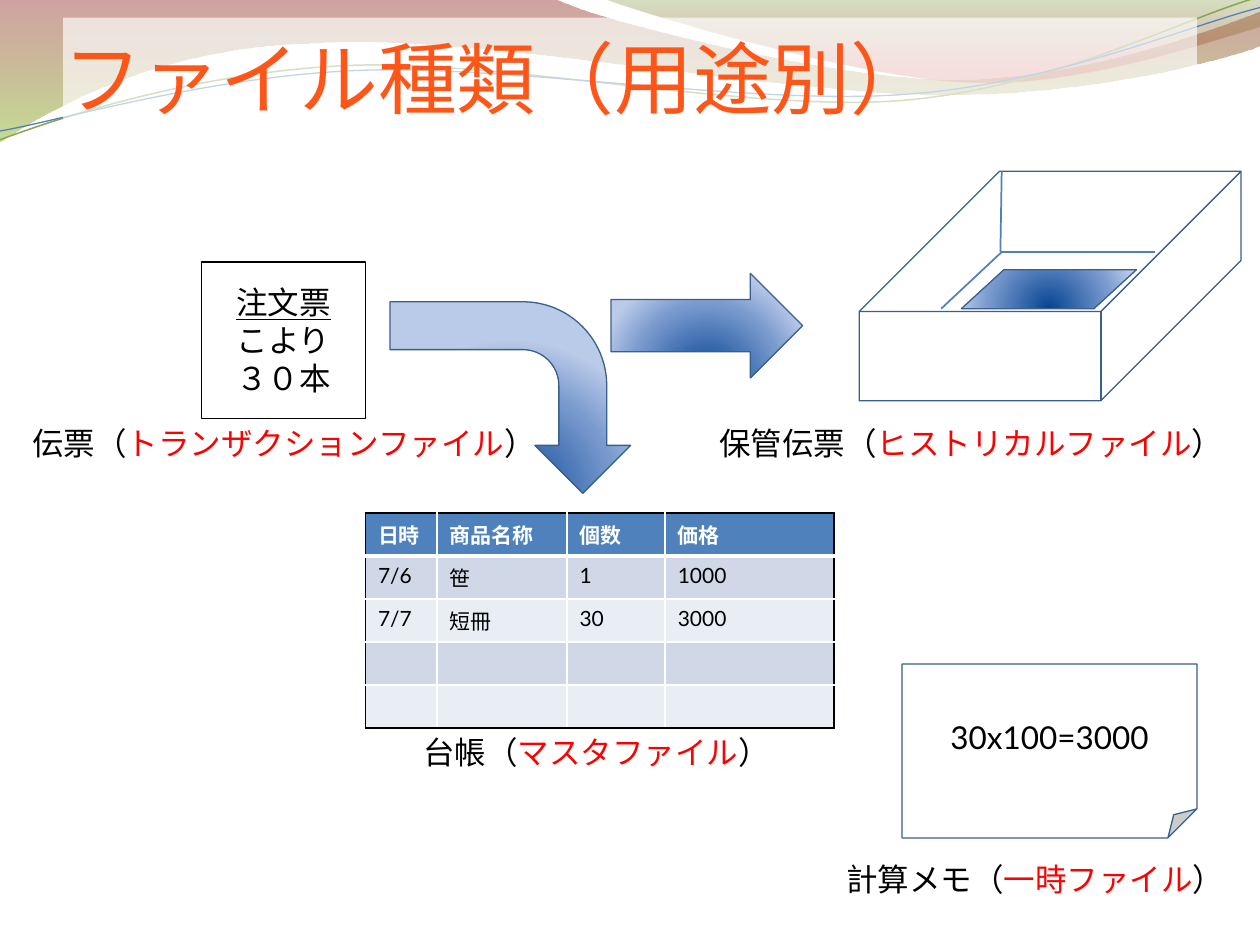
"""Build a slide that sorts business files by use."""
import pptx
import pptx.dml.color
import pptx.enum.shapes
import pptx.enum.text
import pptx.oxml
import pptx.oxml.ns
import pptx.util

COLORS = {
    "black": "000000", "white": "FFFFFF", "red": "FF0000", "orange": "FE5619",
    "outline": "395F8D", "blue": "4F81BD", "olive": "89A54F",
    "odd": "D0D8E8", "even": "E9EDF4",
}
NAMESPACE = pptx.oxml.ns.nsdecls("a")
ROUND = '<a:path path="circle"><a:fillToRect l="50000" t="130000" r="50000" b="-30000"/></a:path>'
DOWN = '<a:lin ang="5400000" scaled="0"/>'
GRADIENTS = {
    "steel": ([(0, "064493", 100), (68, "799ACE", 100), (100, "BACAE9", 100)], ROUND),
    "meadow": ([(0, "973330", 45), (100, "95C238", 55)], DOWN),
    "rose": ([(0, "769537", 30), (80, "BE3330", 45)], DOWN),
}
KIND = pptx.enum.shapes.MSO_SHAPE
ANCHOR = pptx.enum.text.MSO_ANCHOR
ALIGN = pptx.enum.text.PP_ALIGN
FIT = pptx.enum.text.MSO_AUTO_SIZE

deck = pptx.Presentation()
deck.slide_width, deck.slide_height = pptx.util.Inches(10), pptx.util.Inches(7.5)
slide = deck.slides.add_slide(deck.slide_layouts[5])
shapes = slide.shapes
cell = deck.slide_width / 100


def paint(shape, fill=None, line=None, width=0.75):
    """Give a shape its fill and outline, and no shadow."""
    shape.shadow.inherit = False
    if fill in GRADIENTS:
        stops, direction = GRADIENTS[fill]
        marks = "".join(
            f'<a:gs pos="{pos * 1000}"><a:srgbClr val="{color}">'
            f'<a:alpha val="{alpha * 1000}"/></a:srgbClr></a:gs>'
            for pos, color, alpha in stops)
        shape.element.spPr.insert(2, pptx.oxml.parse_xml(
            f'<a:gradFill {NAMESPACE} rotWithShape="1"><a:gsLst>{marks}</a:gsLst>{direction}</a:gradFill>'))
    elif fill:
        shape.fill.solid()
        shape.fill.fore_color.rgb = pptx.dml.color.RGBColor.from_string(COLORS[fill])
    else:
        shape.fill.background()
    if line:
        shape.line.color.rgb = pptx.dml.color.RGBColor.from_string(COLORS[line])
        shape.line.width = pptx.util.Pt(width)
    else:
        shape.line.fill.background()


def write(paragraph, pieces, size=18, face="Lato", align=ALIGN.LEFT, **extras):
    """Add coloured runs of text to a paragraph."""
    paragraph.alignment = align
    for text, color in pieces:
        run = paragraph.add_run()
        run.text = text
        for key, value in {"size": pptx.util.Pt(size), "name": face, **extras}.items():
            setattr(run.font, key, value)
        run.font.color.rgb = pptx.dml.color.RGBColor.from_string(COLORS[color])
        run.font._element.append(pptx.oxml.parse_xml(
            f'<a:ea {NAMESPACE} typeface="Noto Sans CJK JP"/>'))


waves = [
    ("meadow", None, 0, (0, 0), [
        [(44, -0.1)], [(47.6, 1.7), (66.4, 6.3), (75.8, 6.3)],
        [(85.3, 6.3), (95.8, 2.6), (100, 0.9)], [(100.1, 3.6)],
        [(98.3, 4.4), (87, 7.6), (74.6, 7.5)], [(62.2, 7.5), (38.2, 2.8), (25.7, 3.4)],
        [(12.9, 3.6), (4.6, 8.3), (-0.1, 11.3)], [(0, 0)]]),
    ("rose", None, 0, (47.9, -0.1), [
        [(50.9, 1.1), (68.2, 6.2), (76.9, 6.5)], [(85.6, 6.9), (96.1, 3.2), (100, 2.1)],
        [(100, 0)], [(47.9, -0.1)]]),
    (None, "olive", 0.85, (0, 11.1), [
        [(4.8, 9.3), (15.8, 5.7), (27.7, 5.2)], [(39.5, 4.7), (59.3, 8.9), (71.3, 8)],
        [(83.3, 7.1), (93.8, 1.5), (99.8, -0.2)]]),
    (None, "blue", 0.75, (0, 10.4), [
        [(4.7, 9.6), (16.4, 6.1), (28.3, 5.6)], [(40.3, 5.1), (59.7, 8.4), (71.7, 7.5)],
        [(83.6, 6.7), (94.1, 2.1), (100, 0.6)]]),
]
for fill, line, width, start, segments in waves:
    builder = shapes.build_freeform(*(n * cell for n in start))
    builder.add_line_segments(
        [(x * cell, y * cell) for segment in segments for x, y in segment], close=fill is not None)
    wave = builder.convert_to_shape()
    paint(wave, fill, line, width)
    strokes = iter(list(wave.element.iter(pptx.oxml.ns.qn("a:lnTo"))))
    for segment in segments:
        pieces = [next(strokes) for _ in segment]
        if len(pieces) == 3:
            curve = pptx.oxml.parse_xml(f"<a:cubicBezTo {NAMESPACE}/>")
            pieces[0].addprevious(curve)
            for piece in pieces:
                curve.append(piece[0])
                piece.getparent().remove(piece)
    slide.slide_layout.shapes.element.append(wave.element)

heading = shapes.title
for key, value in {"left": 5, "top": 1.4, "width": 90, "height": 8.5}.items():
    setattr(heading, key, round(value * cell))
for key, value in {"margin_left": 0, "margin_right": 0, "margin_bottom": 0, "word_wrap": True,
                   "vertical_anchor": ANCHOR.BOTTOM, "auto_size": FIT.NONE}.items():
    setattr(heading.text_frame, key, value)
heading.fill.solid()
heading.fill.fore_color.rgb = pptx.dml.color.RGBColor.from_string(COLORS["white"])
veil = heading.element.spPr.find(".//" + pptx.oxml.ns.qn("a:srgbClr"))
veil.append(pptx.oxml.parse_xml(f'<a:alpha {NAMESPACE} val="66000"/>'))
write(heading.text_frame.paragraphs[0], [("ファイル種類（用途別）", "orange")], 45, "Noto Sans CJK JP")

entries = [("日時", "商品名称", "個数", "価格"), ("7/6", "笹", "1", "1000"),
           ("7/7", "短冊", "30", "3000"), ("",) * 4, ("",) * 4]
columns = [5.7, 10.3, 7.8, 13.4]
ledger = shapes.add_table(len(entries), len(columns), *(
    round(n * cell) for n in (29, 40.7, sum(columns), 17))).table
for column, width in zip(ledger.columns, columns):
    column.width = round(width * cell)
for r, entry in enumerate(entries):
    ledger.rows[r].height = round(3.4 * cell)
    for c, text in enumerate(entry):
        box = ledger.cell(r, c)
        box.fill.solid()
        shade = "blue" if r == 0 else "odd" if r % 2 else "even"
        box.fill.fore_color.rgb = pptx.dml.color.RGBColor.from_string(COLORS[shade])
        paragraph = box.text_frame.paragraphs[0]
        if text:
            write(paragraph, [(text, "black" if r else "white")], 12, bold=r == 0)
        else:
            paragraph._p.get_or_add_endParaRPr().set("sz", "1200")
        edges = {"L": c == 0, "R": c == len(columns) - 1, "T": r == 0, "B": r == len(entries) - 1}
        for place, (side, outer) in enumerate(edges.items()):
            points = 3 if (r, side) in ((0, "B"), (1, "T")) else 1
            box._tc.get_or_add_tcPr().insert(place, pptx.oxml.parse_xml(
                f'<a:ln{side} {NAMESPACE} w="{points * 12700}"><a:solidFill><a:srgbClr '
                f'val="{COLORS["black" if outer else "white"]}"/></a:solidFill></a:ln{side}>'))

figures = [
    (KIND.RECTANGLE, (16, 20.8, 13, 12.4), None, "black", None, 0, ["注文票", "こより", "３０本"]),
    (KIND.CUBE, (68.2, 13.6, 30.3, 18.2), None, "outline", 0.611, 0, []),
    (KIND.PARALLELOGRAM, (76.3, 21.4, 13.9, 3.1), "steel", "outline", 1.091, 0, []),
    (KIND.BENT_ARROW, (32.9, 22, 15.2, 19.1), "steel", "outline", None, 90, []),
    (KIND.RIGHT_ARROW, (48.5, 21.7, 15.2, 8.3), "steel", "outline", None, 0, []),
    (KIND.FOLDED_CORNER, (71.6, 52.7, 23.4, 13.8), "white", "outline", None, 0, ["30x100=3000"]),
]
for kind, place, fill, line, adjustment, rotation, texts in figures:
    figure = shapes.add_shape(kind, *(round(n * cell) for n in place))
    figure.rotation = rotation
    if adjustment:
        figure.adjustments[0] = adjustment
    paint(figure, fill, line)
    figure.text_frame.vertical_anchor = ANCHOR.MIDDLE
    for index, text in enumerate(texts):
        paragraph = figure.text_frame.add_paragraph() if index else figure.text_frame.paragraphs[0]
        write(paragraph, [(text, "black")], align=ALIGN.CENTER, underline=text == "注文票")

for ends in [(79.5, 13.6, 79.4, 20), (79.4, 20, 91.7, 20), (79.5, 20, 74.7, 24.5)]:
    crease = shapes.add_connector(pptx.enum.shapes.MSO_CONNECTOR.STRAIGHT, *(round(n * cell) for n in ends))
    crease.line.color.rgb = pptx.dml.color.RGBColor.from_string(COLORS["blue"])
    crease.line.width = pptx.util.Pt(1)
    crease.element.spPr.append(pptx.oxml.parse_xml(f"<a:effectLst {NAMESPACE}/>"))

captions = [
    ("台帳", "マスタファイル", 32.6, 57.7, 29.8),
    ("伝票", "トランザクションファイル", 1.6, 33.2, 42.4),
    ("保管伝票", "ヒストリカルファイル", 56.1, 33.2, 42.4),
    ("計算メモ", "一時ファイル", 66.2, 67.8, 32.3),
]
for paper, role, left, top, width in captions:
    frame = shapes.add_textbox(*(round(n * cell) for n in (left, top, width, 4))).text_frame
    frame.word_wrap = False
    frame.auto_size = FIT.SHAPE_TO_FIT_TEXT
    write(frame.paragraphs[0], [(paper + "（", "black"), (role, "red"), ("）", "black")])

deck.save("out.pptx")
